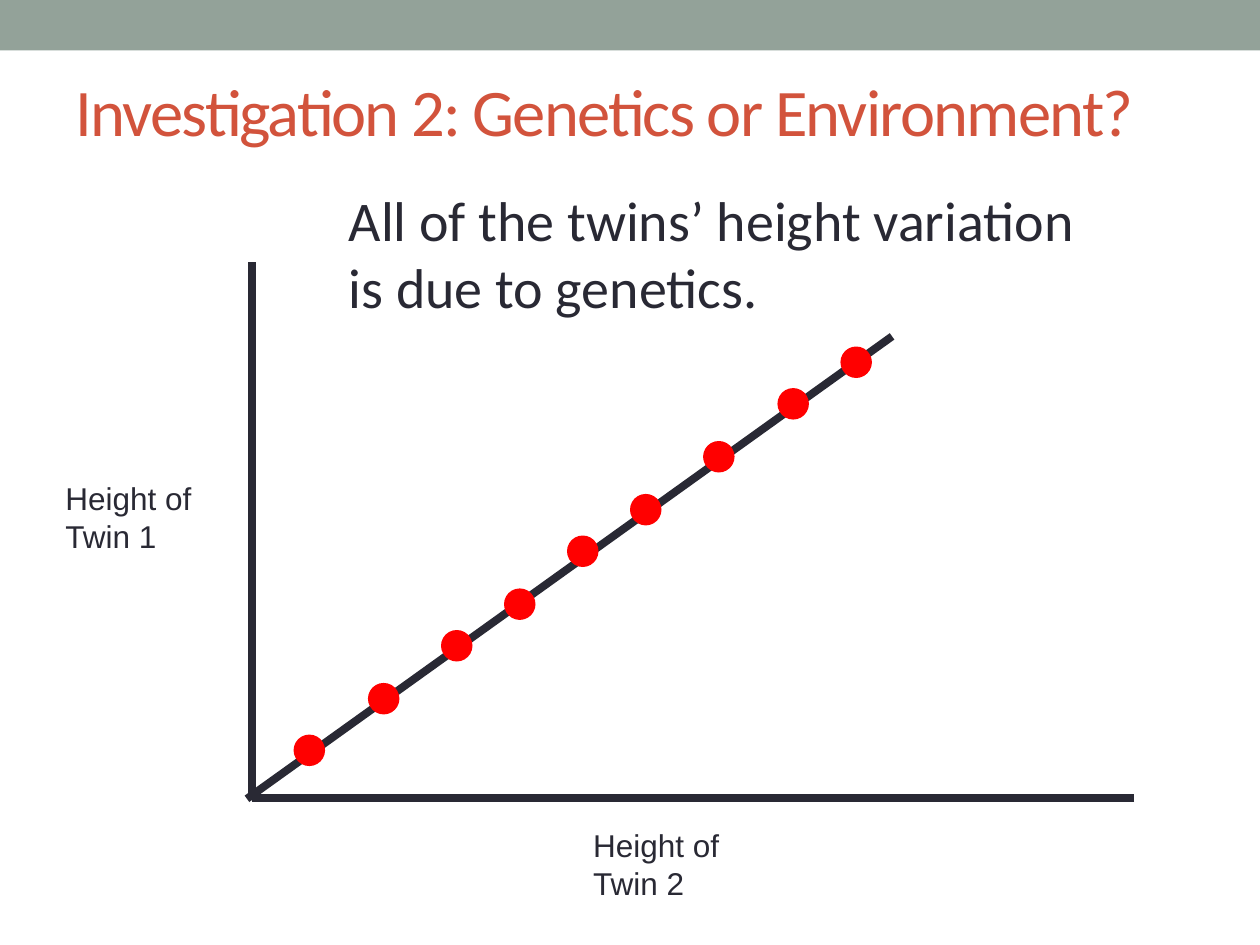
"""Build a slide showing twin heights that vary through genetics alone."""
from pptx import Presentation
from pptx.dml.color import RGBColor
from pptx.enum import shapes, text
from pptx.oxml.ns import qn
from pptx.util import Inches, Pt
from lxml import etree

INK, RED, RUST, SAGE = "292934", "FF0000", "D2533C", "93A299"


def paint(fill, color):
    fill.solid()
    fill.fore_color.rgb = RGBColor.from_string(color)


def write(words, box, size=18, face="Arial", color=INK, anchor="TOP", track=None):
    frame = slide.shapes.add_textbox(*map(Inches, box)).text_frame
    frame.word_wrap = True
    frame.vertical_anchor = text.MSO_ANCHOR[anchor]
    frame.text = words
    for run in frame.paragraphs[0].runs:
        run.font.size, run.font.name = Pt(size), face
        paint(run.font.fill, color)
        if track:
            run.font._element.set("spc", str(track))


deck = Presentation()
deck.slide_width, deck.slide_height = Inches(10), Inches(7.5)
slide = deck.slides.add_slide(deck.slide_layouts[6])

band = slide.shapes.add_shape(
    shapes.MSO_SHAPE.RECTANGLE, 0, 0, Inches(10), Inches(0.4))
band.shadow.inherit = False
paint(band.fill, SAGE)
band.line.fill.background()

axes = [(2, 2.08, 2, 6.33), (9, 6.33, 2, 6.33)]
trend = (7.08, 2.67, 1.96, 6.34)
for ends in axes + [trend]:
    line = slide.shapes.add_connector(
        shapes.MSO_CONNECTOR.STRAIGHT, *map(Inches, ends))
    line.line.width = Pt(4.5)
    paint(line.line.fill, INK)
    etree.SubElement(line._element.spPr, qn("a:effectLst"))

points = [(2.33, 5.83), (2.92, 5.42), (3.5, 5), (4, 4.67), (4.5, 4.25),
          (5, 3.92), (5.58, 3.5), (6.17, 3.08), (6.67, 2.75)]
for left, top in points:
    dot = slide.shapes.add_shape(
        shapes.MSO_SHAPE.OVAL, *map(Inches, (left, top, 0.25, 0.25)))
    dot.shadow.inherit = False
    paint(dot.fill, RED)
    dot.line.fill.background()

write("Height of\vTwin 2", (4.61, 6.51, 1.78, 0.71))
write("Height of Twin 1", (0.42, 3.75, 1.25, 0.71))
write("All of the twins’ height variation\vis due to genetics.",
      (2.67, 1.42, 6.33, 1.18), size=32, face="Calibri")
write("Investigation 2: Genetics or Environment?", (0.5, 0.5, 9, 0.75),
      size=38, face="Calibri", color=RUST, anchor="MIDDLE", track=-100)

deck.save("out.pptx")
